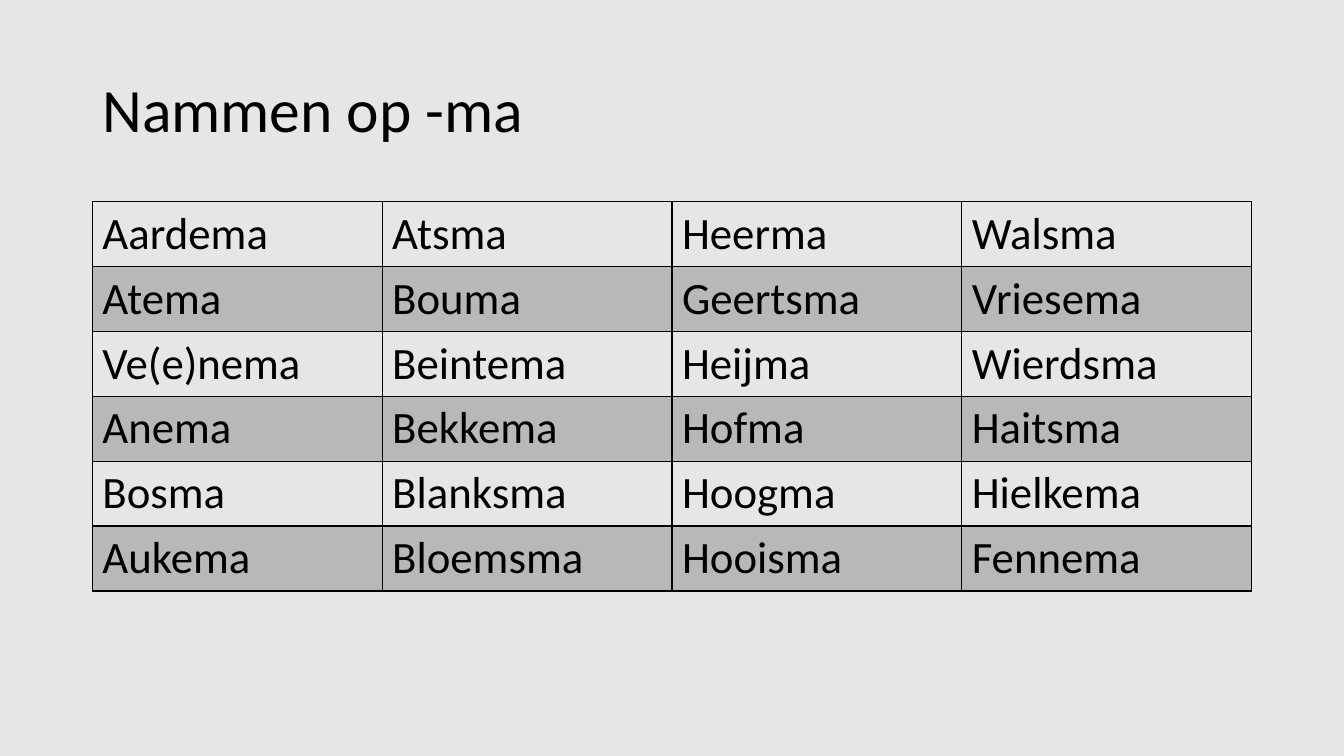
from dataclasses import dataclass

from lxml.etree import SubElement
from pptx import Presentation
from pptx.dml.color import RGBColor
from pptx.enum.text import MSO_ANCHOR, PP_ALIGN
from pptx.oxml.ns import qn
from pptx.slide import Slide
from pptx.table import _Cell
from pptx.text.text import _Paragraph
from pptx.util import Emu, Pt

PX = 9525  # EMU in one px, 96 px to the inch


@dataclass(frozen=True)
class Theme:
    font: str = "Calibri"
    background: str = "E7E6E6"
    ink: str = "000000"
    band_alpha: int = 20  # percent
    title_size: int = 44
    name_size: int = 32
    border_width: int = 1  # points


@dataclass(frozen=True)
class Box:
    left: int
    top: int
    width: int
    height: int

    def emu(self) -> tuple[Emu, ...]:
        return tuple(px(n) for n in (self.left, self.top, self.width, self.height))


@dataclass(frozen=True)
class NameRow:
    names: tuple[str, ...]
    banded: bool = False


THEME = Theme()
TITLE_BOX = Box(88, 38, 1104, 139)
ROW_HEIGHT = 61
NAME_ROWS = (
    NameRow(("Aardema", "Atsma", "Heerma", "Walsma")),
    NameRow(("Atema", "Bouma", "Geertsma", "Vriesema"), banded=True),
    NameRow(("Ve(e)nema", "Beintema", "Heijma", "Wierdsma")),
    NameRow(("Anema", "Bekkema", "Hofma", "Haitsma"), banded=True),
    NameRow(("Bosma", "Blanksma", "Hoogma", "Hielkema")),
    NameRow(("Aukema", "Bloemsma", "Hooisma", "Fennema"), banded=True),
)
NAMES_BOX = Box(88, 192, 1104, ROW_HEIGHT * len(NAME_ROWS))


def px(length: int) -> Emu:
    return Emu(length * PX)


def add_run(paragraph: _Paragraph, text: str, size: int) -> None:
    run = paragraph.add_run()
    run.text = text
    run.font.name = THEME.font
    run.font.size = Pt(size)
    run.font.color.rgb = RGBColor.from_string(THEME.ink)


def add_borders(cell: _Cell) -> None:
    properties = cell._tc.get_or_add_tcPr()
    for side in ("a:lnL", "a:lnR", "a:lnT", "a:lnB"):
        line = SubElement(properties, qn(side), w=str(Pt(THEME.border_width)))
        fill = SubElement(line, qn("a:solidFill"))
        SubElement(fill, qn("a:srgbClr"), val=THEME.ink)


def fill_cell(cell: _Cell, banded: bool) -> None:
    if not banded:
        cell.fill.background()
        return
    cell.fill.solid()
    cell.fill.fore_color.rgb = RGBColor.from_string(THEME.ink)
    color = cell._tc.tcPr.find(qn("a:solidFill")).find(qn("a:srgbClr"))
    SubElement(color, qn("a:alpha"), val=str(THEME.band_alpha * 1000))


def add_title(slide: Slide, text: str) -> None:
    title = slide.shapes.title
    title.left, title.top, title.width, title.height = TITLE_BOX.emu()
    title.text_frame.vertical_anchor = MSO_ANCHOR.MIDDLE
    paragraph = title.text_frame.paragraphs[0]
    paragraph.alignment = PP_ALIGN.LEFT
    paragraph.line_spacing = 0.9
    add_run(paragraph, text, THEME.title_size)


def add_name_table(slide: Slide, rows: tuple[NameRow, ...]) -> None:
    frame = slide.shapes.add_table(len(rows), len(rows[0].names), *NAMES_BOX.emu())
    table = frame.table
    table.first_row = False
    table.horz_banding = False
    for row_index, row in enumerate(rows):
        for column_index, name in enumerate(row.names):
            cell = table.cell(row_index, column_index)
            add_run(cell.text_frame.paragraphs[0], name, THEME.name_size)
            add_borders(cell)
            fill_cell(cell, row.banded)


def main() -> None:
    presentation = Presentation()
    presentation.slide_width, presentation.slide_height = px(1280), px(720)
    slide = presentation.slides.add_slide(presentation.slide_layouts[5])

    # Background
    slide.background.fill.solid()
    slide.background.fill.fore_color.rgb = RGBColor.from_string(THEME.background)

    # Heading and surnames
    add_title(slide, "Nammen op -ma")
    add_name_table(slide, NAME_ROWS)

    presentation.save("out.pptx")


if __name__ == "__main__":
    main()
